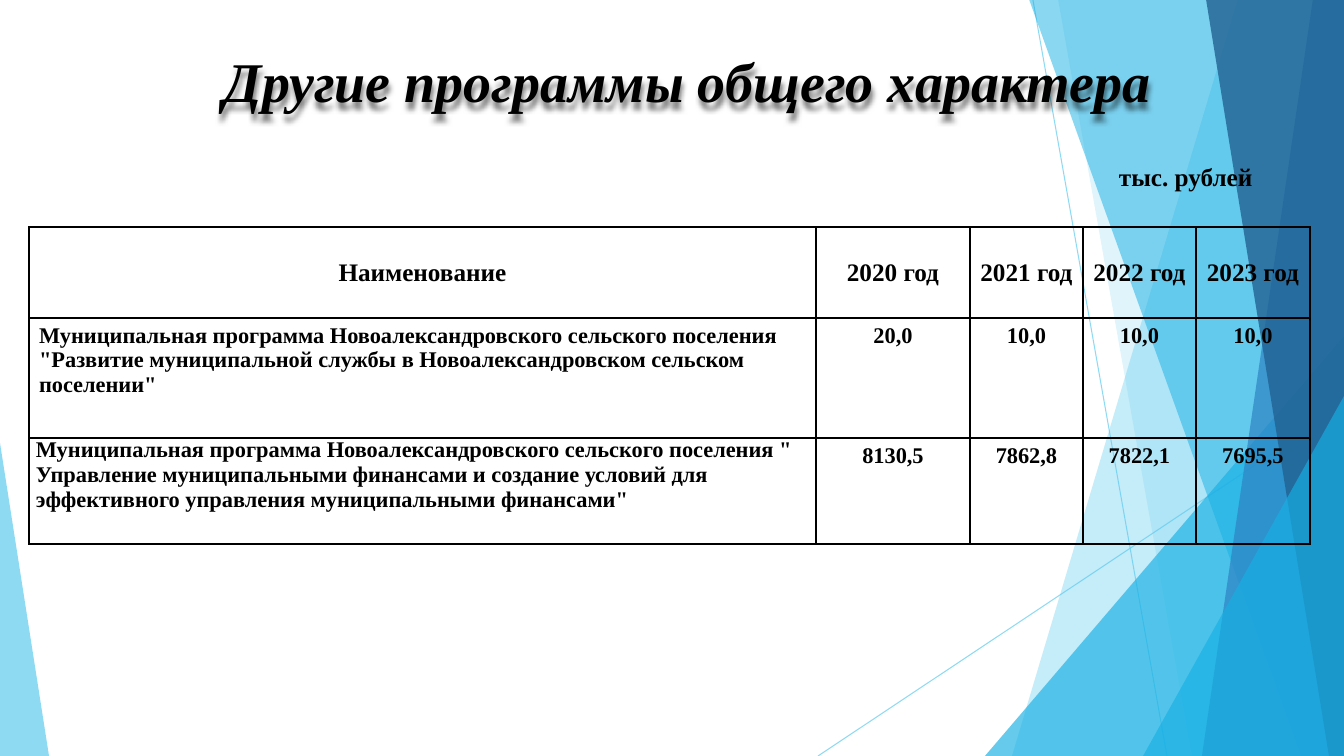
from lxml.etree import SubElement
from pptx import Presentation
from pptx.dml.color import RGBColor
from pptx.enum.shapes import MSO_CONNECTOR, MSO_SHAPE
from pptx.enum.text import MSO_ANCHOR as ANCHOR, PP_ALIGN as ALIGN
from pptx.oxml import parse_xml
from pptx.oxml.ns import nsdecls, qn
from pptx.util import Pt

PX = 914400 / 100.8
WIDTH, HEIGHT = 1344, 756
FONT = "Times New Roman"
BLACK = RGBColor(0x00, 0x00, 0x00)
SKY = RGBColor(0x5F, 0xCB, 0xEF)
CYAN = RGBColor(0x17, 0xB0, 0xE4)
BLUE = RGBColor(0x2E, 0x83, 0xC3)
NAVY = RGBColor(0x22, 0x62, 0x92)

COLUMNS = [787, 154, 113, 113, 114]
ROWS = [91, 120, 106]
PROGRAMS = [
    ["Наименование", "2020 год", "2021 год", "2022 год", "2023 год"],
    ["Муниципальная программа Новоалександровского сельского поселения "
     "\"Развитие муниципальной службы в Новоалександровском сельском поселении\"",
     "20,0", "10,0", "10,0", "10,0"],
    ["Муниципальная программа Новоалександровского сельского поселения "
     "\" Управление муниципальными финансами и создание условий для "
     "эффективного управления муниципальными финансами\"",
     "8130,5", "7862,8", "7822,1", "7695,5"],
]


def emu(*lengths):
    return [round(n * PX) for n in lengths]


def set_alpha(element, percent):
    """Set the opacity of the solid colours already in place."""
    for clr in element.iter(qn("a:srgbClr")):
        SubElement(clr, qn("a:alpha"), val=str(percent * 1000))


class Slide:
    def __init__(self, prs):
        self.s = prs.slides.add_slide(prs.slide_layouts[6])
        self.shapes = self.s.shapes

    def paint(self, sp, color, opacity):
        sp.shadow.inherit = False
        sp.fill.solid()
        sp.fill.fore_color.rgb = color
        sp.line.fill.background()
        set_alpha(sp._element.spPr, opacity)

    def line(self, x1, y1, x2, y2, color, opacity):
        cn = self.shapes.add_connector(MSO_CONNECTOR.STRAIGHT, *emu(x1, y1, x2, y2))
        cn.line.color.rgb = color
        cn.line.width = Pt(0.75)
        spPr = cn._element.spPr
        set_alpha(spPr, opacity)
        SubElement(spPr, qn("a:effectLst"))

    def band(self, top_x, bottom_x, color, opacity):
        """Fill from a slanted left edge to the right side of the slide."""
        fb = self.shapes.build_freeform(top_x, -1, scale=PX)
        fb.add_line_segments([(WIDTH, -1), (WIDTH, HEIGHT), (bottom_x, HEIGHT)])
        self.paint(fb.convert_to_shape(), color, opacity)

    def triangle(self, x, y, w, h, apex, color, opacity):
        sp = self.shapes.add_shape(MSO_SHAPE.ISOSCELES_TRIANGLE, *emu(x, y, w, h))
        sp.adjustments[0] = apex
        self.paint(sp, color, opacity)

    def set_text(self, tf, text, size, align=ALIGN.LEFT, italic=False):
        tf.word_wrap = True
        p = tf.paragraphs[0]
        p.text = text
        p.alignment = align
        p.font.name = FONT
        p.font.size = Pt(size)
        p.font.bold = True
        p.font.italic = italic
        p.font.color.rgb = BLACK

    def title(self, x, y, w, h, text):
        sp = self.shapes.add_shape(MSO_SHAPE.ROUNDED_RECTANGLE, *emu(x, y, w, h))
        sp.fill.background()
        sp.line.fill.background()
        sp.shadow.inherit = False
        sp._element.spPr.find(qn("a:effectLst")).append(parse_xml(
            f'<a:outerShdw {nsdecls("a")} blurRad="50800" dist="50800" dir="5400000">'
            '<a:srgbClr val="000000"><a:alpha val="50000"/></a:srgbClr></a:outerShdw>'))
        tf = sp.text_frame
        tf.margin_left = tf.margin_top = tf.margin_right = tf.margin_bottom = 0
        tf.vertical_anchor = ANCHOR.MIDDLE
        self.set_text(tf, text, 40, ALIGN.CENTER, italic=True)

    def label(self, x, y, w, h, text):
        self.set_text(self.shapes.add_textbox(*emu(x, y, w, h)).text_frame, text, 18)

    def border(self, cell):
        tcPr = cell._tc.get_or_add_tcPr()
        for i, side in enumerate(("lnL", "lnR", "lnT", "lnB")):
            tcPr.insert(i, parse_xml(
                f'<a:{side} {nsdecls("a")} w="12700"><a:solidFill>'
                f'<a:srgbClr val="{BLACK}"/></a:solidFill></a:{side}>'))

    def table(self, x, y, columns, rows, data):
        tb = self.shapes.add_table(len(rows), len(columns),
                                   *emu(x, y, sum(columns), sum(rows))).table
        tb.first_row = tb.horz_banding = False
        for col, w in zip(tb.columns, emu(*columns)):
            col.width = w
        for row, h in zip(tb.rows, emu(*rows)):
            row.height = h
        for r, texts in enumerate(data):
            for c, text in enumerate(texts):
                cell = tb.cell(r, c)
                cell.fill.background()
                self.border(cell)
                cell.vertical_anchor = ANCHOR.TOP if r else ANCHOR.MIDDLE
                align = ALIGN.LEFT if r and not c else ALIGN.CENTER
                self.set_text(cell.text_frame, text, 16 if r else 18, align)
        last = tb.cell(len(rows) - 1, 0)
        last.margin_left = last.margin_right = emu(7)[0]
        last.margin_top = last.margin_bottom = 0


def main():
    prs = Presentation()
    prs.slide_width, prs.slide_height = emu(WIDTH, HEIGHT)
    s = Slide(prs)

    s.line(1033, 0, 1167, HEIGHT, SKY, 70)
    s.line(WIDTH, 406, 818, HEIGHT, SKY, 70)
    s.band(1238, 1012, SKY, 36)
    s.band(1058, 1192, SKY, 20)
    s.triangle(985, 336, 359, 420, 1, CYAN, 66)
    s.band(1029, 1301, CYAN, 50)
    s.band(1313, 1202, BLUE, 70)
    s.band(1206, 1329, NAVY, 80)
    s.triangle(1143, 396, 201, 360, 1, CYAN, 66)
    s.triangle(0, 443, 49, 313, 0, SKY, 70)

    s.title(105, 29, 1178, 103, "Другие программы общего характера ")
    s.table(29, 227, COLUMNS, ROWS, PROGRAMS)
    s.label(1109, 156, 201, 40, "тыс. рублей")
    prs.save("out.pptx")


if __name__ == "__main__":
    main()
